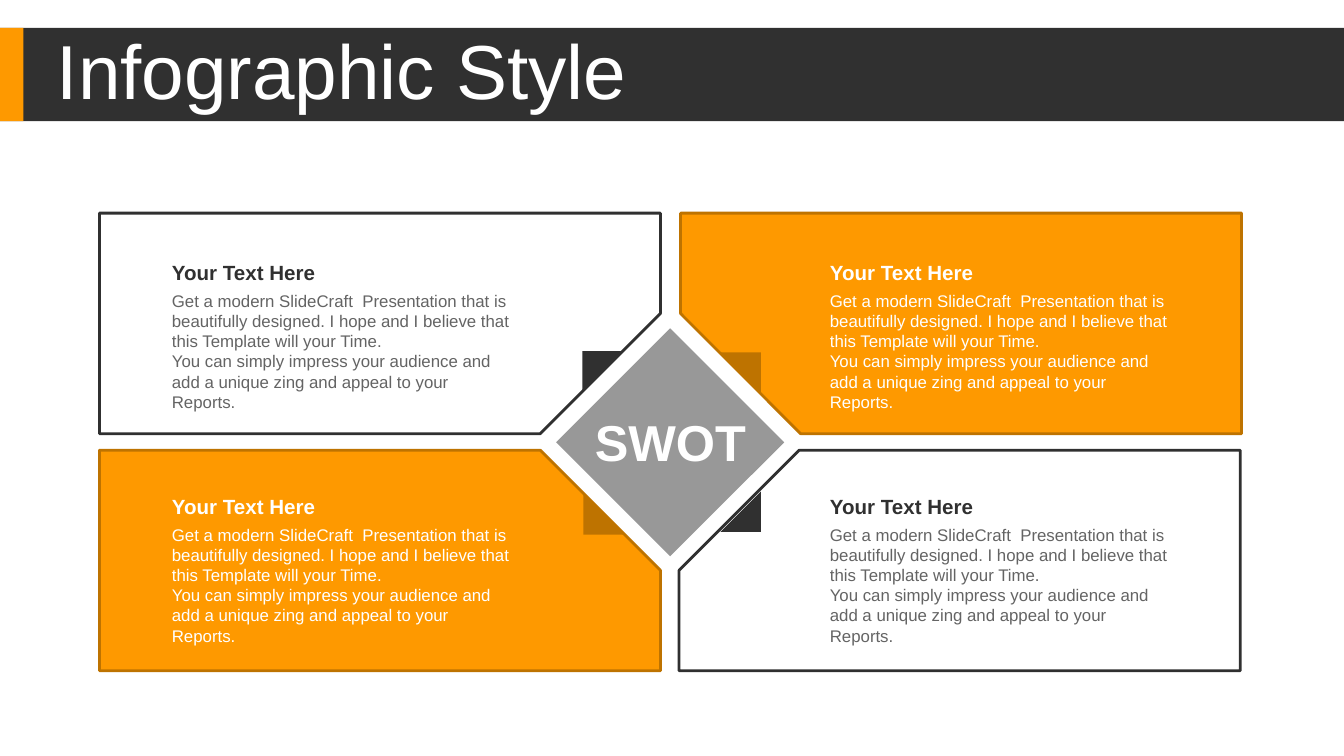
from pptx import Presentation
from pptx.dml.color import RGBColor
from pptx.enum.shapes import MSO_SHAPE
from pptx.enum.text import MSO_ANCHOR, PP_ALIGN
from pptx.util import Pt

DARK, ORANGE, BROWN = "303030", "FE9900", "BE7300"
GREY, SLATE, WHITE = "989898", "646464", "FFFFFF"
HEAD = "Your Text Here"
BODY = [
    "Get a modern SlideCraft  Presentation that is beautifully designed. "
    "I hope and I believe that this Template will your Time.",
    "You can simply impress your audience and add a unique zing and appeal to your Reports.",
]


def color(code):
    """Turn a hex string into a colour."""
    return RGBColor.from_string(code)


def paint(shape, fill=None, line=None):
    """Set fill and outline, leaving out whichever is not given."""
    shape.shadow.inherit = False
    if fill:
        shape.fill.solid()
        shape.fill.fore_color.rgb = color(fill)
    else:
        shape.fill.background()
    if line:
        shape.line.color.rgb = color(line)
        shape.line.width = Pt(1.5)
    else:
        shape.line.fill.background()


def block(slide, kind, left, top, width, height, fill, turn=0):
    """Add a filled preset shape."""
    shape = slide.shapes.add_shape(kind, Pt(left), Pt(top), Pt(width), Pt(height))
    shape.rotation = turn
    paint(shape, fill)


def write(slide, lines, left, top, width, height, size=9, ink=WHITE, bold=False,
          anchor=MSO_ANCHOR.MIDDLE, align=PP_ALIGN.LEFT, inset=(7.2, 3.6), space=1.0):
    """Add a text box with one paragraph for each line."""
    frame = slide.shapes.add_textbox(Pt(left), Pt(top), Pt(width), Pt(height)).text_frame
    frame.word_wrap = True
    frame.vertical_anchor = anchor
    frame.margin_left = frame.margin_right = Pt(inset[0])
    frame.margin_top = frame.margin_bottom = Pt(inset[1])
    frame.text = "\n".join(lines)
    for para in frame.paragraphs:
        para.alignment = align
        para.line_spacing = space
        for run in para.runs:
            run.font.name = "Arial"
            run.font.size = Pt(size)
            run.font.bold = bold
            run.font.color.rgb = color(ink)


def panel(slide, outer, inner, far, near, fill, line):
    """Add a panel whose corner at the centre of the slide is cut off."""
    cut = 64.4
    side = inner - cut if inner > outer else inner + cut
    rise = near - cut if near > far else near + cut
    points = [(outer, far), (inner, far), (inner, rise), (side, near), (outer, near)]
    points = [(Pt(x), Pt(y)) for x, y in points]
    build = slide.shapes.build_freeform(*points[0], scale=1.0)
    build.add_line_segments(points[1:], close=True)
    paint(build.convert_to_shape(), fill, line)


def label(slide, left, top, head, ink):
    """Add a heading with its body text below."""
    write(slide, BODY, left, top + 16.6, 196, 72.7, ink=ink, anchor=MSO_ANCHOR.TOP)
    write(slide, [HEAD], left, top, 196, 21, size=11, ink=head, bold=True)


def main():
    """Build the slide and save it."""
    deck = Presentation()
    deck.slide_width, deck.slide_height = Pt(720), Pt(405)
    slide = deck.slides.add_slide(deck.slide_layouts[6])

    block(slide, MSO_SHAPE.RECTANGLE, 0, 15, 720, 50, DARK)
    block(slide, MSO_SHAPE.RECTANGLE, 0, 15, 12.5, 50, ORANGE)
    write(slide, ["Infographic Style"], 25.5, 18.7, 523, 42.5, size=41,
          inset=(5, 2.9), space=0.9)

    panel(slide, 53.3, 353.8, 114.2, 232.4, None, DARK)
    panel(slide, 665.1, 364.6, 114.2, 232.4, ORANGE, BROWN)
    panel(slide, 53.3, 353.8, 359.4, 241.2, ORANGE, BROWN)
    panel(slide, 664.4, 363.8, 359.4, 241.2, None, DARK)

    block(slide, MSO_SHAPE.RECTANGLE, 315.8, 193.8, 86.4, 86.4, GREY, 45)
    for left, top, turn, fill in [(386, 188.8, 180, BROWN), (386, 263.3, 270, DARK),
                                  (312.5, 264.9, 0, BROWN), (312, 188.1, 90, DARK)]:
        block(slide, MSO_SHAPE.RIGHT_TRIANGLE, left, top, 21.6, 21.6, fill, turn)

    for col, left in enumerate((85, 437.5)):
        for row, top in enumerate((135.4, 260.7)):
            inks = (DARK, SLATE) if col == row else (WHITE, WHITE)
            label(slide, left, top, *inks)
    write(slide, ["SWOT"], 312, 217.6, 94.3, 38.2, size=27, bold=True,
          align=PP_ALIGN.CENTER, inset=(5, 2.9))

    deck.save("out.pptx")


if __name__ == "__main__":
    main()
